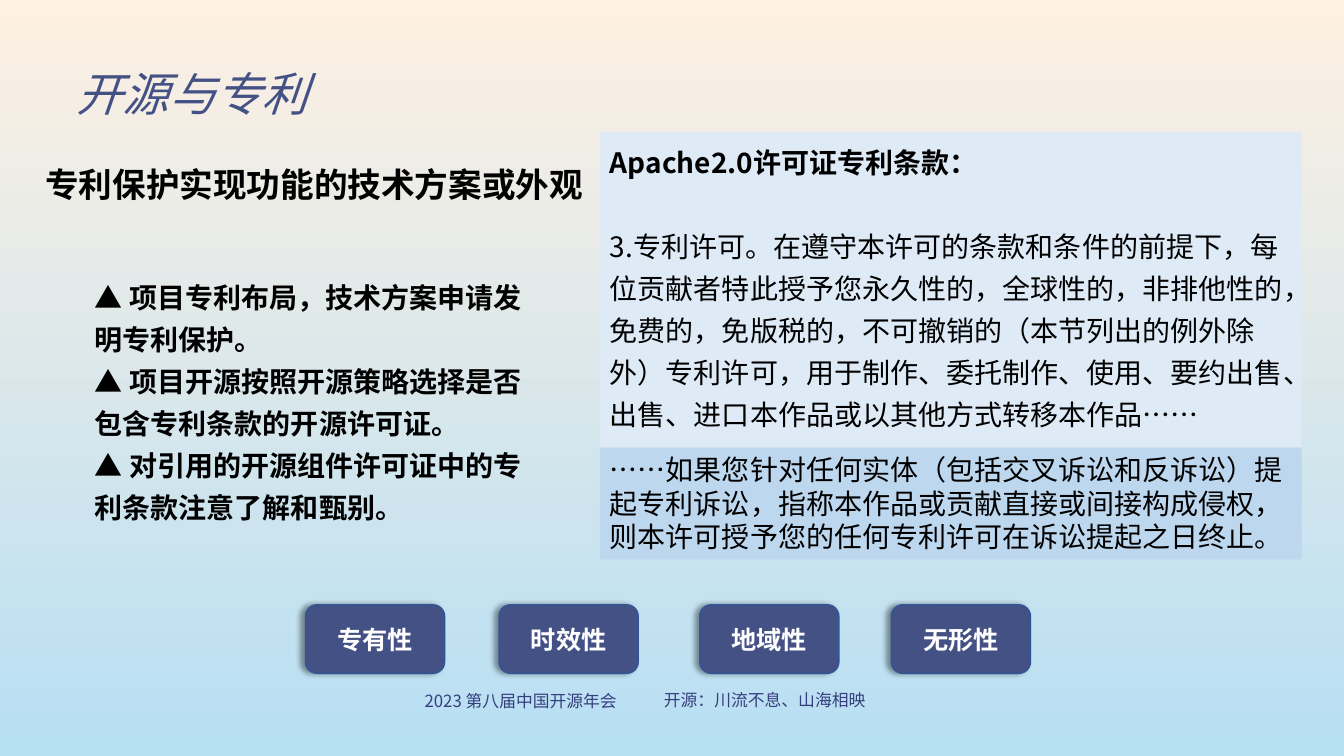
from lxml.etree import SubElement
from pptx import Presentation
from pptx.dml.color import RGBColor
from pptx.enum.shapes import MSO_SHAPE
from pptx.enum.text import MSO_ANCHOR, MSO_AUTO_SIZE, PP_ALIGN
from pptx.oxml.ns import qn
from pptx.util import Inches, Pt

FONT = "Noto Sans CJK SC"
COLORS = {
    "sky_top": "FEF0E2",
    "sky_bottom": "B7DFF4",
    "navy": "445185",
    "footer": "363E7D",
    "black": "000000",
    "white": "FFFFFF",
    "clause": "DEEBF7",
    "termination": "BDD7EE",
    "pill_line": "2F5597",
}
FOOTERS = [
    ("2023 第八届中国开源年会", 3.79, 6.8, 2.75),
    ("开源：川流不息、山海相映", 6.38, 6.79, 2.41),
]
PATENT_POINTS = [
    "▲ 项目专利布局，技术方案申请发明专利保护。",
    "▲ 项目开源按照开源策略选择是否包含专利条款的开源许可证。",
    "▲ 对引用的开源组件许可证中的专利条款注意了解和甄别。",
]
CLAUSE_HEADING = "Apache2.0许可证专利条款："
CLAUSE = (
    "3.专利许可。在遵守本许可的条款和条件的前提下，每位贡献者特此授予您永久性的，"
    "全球性的，非排他性的，免费的，免版税的，不可撤销的（本节列出的例外除外）专利许可，"
    "用于制作、委托制作、使用、要约出售、出售、进口本作品或以其他方式转移本作品……"
)
TERMINATION = (
    "……如果您针对任何实体（包括交叉诉讼和反诉讼）提起专利诉讼，"
    "指称本作品或贡献直接或间接构成侵权，则本许可授予您的任何专利许可在诉讼提起之日终止。"
)
PILLS = [("专有性", 3.03), ("时效性", 4.95), ("地域性", 6.94), ("无形性", 8.84)]


def color(name):
    return RGBColor.from_string(COLORS[name])


def write(para, text, size, ink="black", bold=False, italic=False,
          align=PP_ALIGN.LEFT, spacing=None):
    para.alignment = align
    para.line_spacing = spacing
    span = para.add_run()
    span.text = text
    span.font.size = Pt(size)
    span.font.bold = bold
    span.font.italic = italic
    span.font.color.rgb = color(ink)
    span.font.name = FONT
    SubElement(span.font._element, qn("a:ea"), typeface=FONT)


def paint_background(page):
    fill = page.background.fill
    fill.gradient()
    fill.gradient_angle = 270
    for stop, name in zip(fill.gradient_stops, ("sky_top", "sky_bottom")):
        stop.color.rgb = color(name)


def set_title(page, text):
    title = page.shapes.title
    title.left, title.top = Inches(0.66), Inches(0.42)
    title.width, title.height = Inches(4.61), Inches(1.07)
    frame = title.text_frame
    frame.auto_size = MSO_AUTO_SIZE.NONE
    frame.vertical_anchor = MSO_ANCHOR.MIDDLE
    write(frame.paragraphs[0], text, 33, "navy", italic=True, spacing=0.9)


def add_text(page, left, top, width, height):
    box = page.shapes.add_textbox(
        Inches(left), Inches(top), Inches(width), Inches(height))
    box.text_frame.word_wrap = True
    return box.text_frame


def add_panel(page, top, height, fill):
    panel = page.shapes.add_shape(
        MSO_SHAPE.RECTANGLE, Inches(5.95), Inches(top), Inches(6.96), Inches(height))
    panel.shadow.inherit = False
    panel.fill.solid()
    panel.fill.fore_color.rgb = color(fill)
    panel.line.fill.background()
    panel.text_frame.vertical_anchor = MSO_ANCHOR.TOP
    return panel.text_frame


def add_shadow(shape):
    shape.shadow.inherit = False
    effects = shape._element.spPr.find(qn("a:effectLst"))
    shadow = SubElement(effects, qn("a:outerShdw"), blurRad=str(Pt(4)),
                        dist=str(Pt(3)), dir="10800000", algn="r", rotWithShape="0")
    shade = SubElement(shadow, qn("a:srgbClr"), val=COLORS["black"])
    SubElement(shade, qn("a:alpha"), val="40000")


def add_pill(page, text, left):
    pill = page.shapes.add_shape(
        MSO_SHAPE.ROUNDED_RECTANGLE, Inches(left), Inches(6), Inches(1.38), Inches(0.68))
    pill.fill.solid()
    pill.fill.fore_color.rgb = color("navy")
    pill.line.color.rgb = color("pill_line")
    pill.line.width = Pt(1)
    add_shadow(pill)
    frame = pill.text_frame
    frame.vertical_anchor = MSO_ANCHOR.MIDDLE
    write(frame.paragraphs[0], text, 18, "white", bold=True, align=PP_ALIGN.CENTER)


def main():
    deck = Presentation()
    deck.slide_width, deck.slide_height = Inches(13.33), Inches(7.5)
    page = deck.slides.add_slide(deck.slide_layouts[5])
    paint_background(page)
    set_title(page, "开源与专利")

    for text, left, top, width in FOOTERS:
        footer = add_text(page, left, top, width, 0.3)
        write(footer.paragraphs[0], text, 12, "footer", align=PP_ALIGN.CENTER)

    summary = add_text(page, 0.35, 1.58, 5.61, 0.5)
    write(summary.paragraphs[0], "专利保护实现功能的技术方案或外观", 24, bold=True)

    clause = add_panel(page, 1.31, 3.13, "clause")
    write(clause.paragraphs[0], CLAUSE_HEADING, 20, bold=True, spacing=1.25)
    clause_body = clause.add_paragraph()
    write(clause_body, CLAUSE, 20, spacing=1.25)
    clause_body.space_before = Pt(30)

    termination = add_panel(page, 4.44, 1.11, "termination")
    write(termination.paragraphs[0], TERMINATION, 20)

    points = add_text(page, 0.84, 2.65, 4.61, 2.63)
    for index, text in enumerate(PATENT_POINTS):
        para = points.add_paragraph() if index else points.paragraphs[0]
        write(para, text, 20, bold=True, spacing=1.25)

    for text, left in PILLS:
        add_pill(page, text, left)

    deck.save("out.pptx")


if __name__ == "__main__":
    main()
